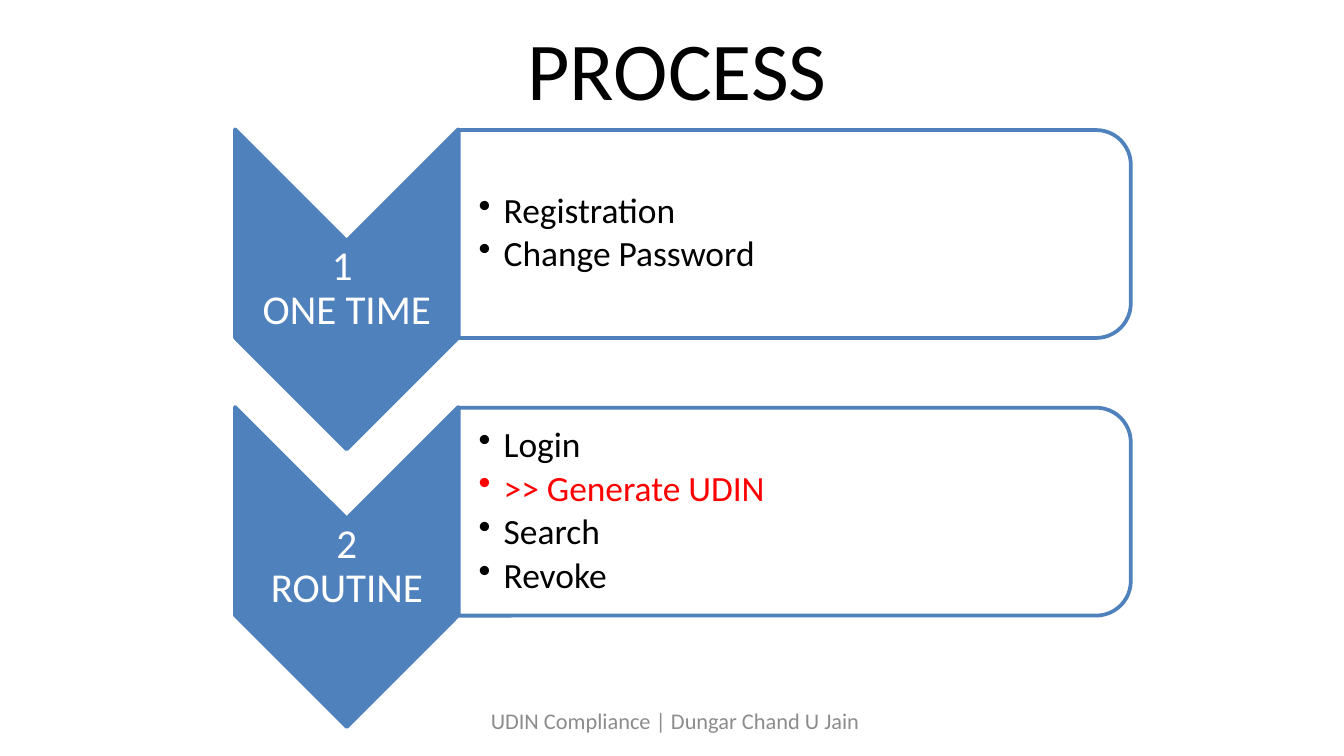
from dataclasses import dataclass

import lxml.etree
import pptx
import pptx.dml.color
import pptx.enum.shapes
import pptx.enum.text
import pptx.oxml.ns
import pptx.presentation
import pptx.shapes.autoshape
import pptx.slide
import pptx.util

Pt = pptx.util.Pt
Align = pptx.enum.text.PP_ALIGN
Shape = pptx.enum.shapes.MSO_SHAPE
qn = pptx.oxml.ns.qn

COLORS = {
    "blue": "4F81BD",
    "white": "FFFFFF",
    "black": "000000",
    "red": "FF0000",
    "gray": "8C8C8C",
}
FONT = "Calibri"
STEP_PITCH = 148.75


@dataclass(frozen=True)
class Box:
    left: float
    top: float
    width: float
    height: float

    def lowered(self, distance: float) -> "Box":
        return Box(self.left, self.top + distance, self.width, self.height)

    def lengths(self) -> list[pptx.util.Length]:
        return [Pt(value) for value in (self.left, self.top, self.width, self.height)]


@dataclass(frozen=True)
class Step:
    label: str
    items: tuple[str, ...]
    highlighted: str = ""


CHEVRON = Box(100, 95.2, 171.4, 119.6)
LABEL = Box(126, 129.4, 119.6, 51.2)
PANEL = Box(370.1, -54.6, 111.4, 360)
ITEMS = Box(245.6, 74.9, 355, 100.6)

STEPS = (
    Step("1 \vONE TIME", ("Registration", "Change Password")),
    Step("2\vROUTINE", ("Login", ">> Generate UDIN", "Search", "Revoke"), ">> Generate UDIN"),
)


def color(name: str) -> pptx.dml.color.RGBColor:
    return pptx.dml.color.RGBColor.from_string(COLORS[name])


def add_text(
    slide: pptx.slide.Slide,
    box: Box,
    lines: tuple[str, ...],
    size: float,
    color_name: str,
    alignment: Align = Align.CENTER,
    margins: tuple[float, float] = (7.2, 3.6),
) -> pptx.shapes.autoshape.Shape:
    shape = slide.shapes.add_textbox(*box.lengths())
    frame = shape.text_frame
    frame.text = "\n".join(lines)
    frame.word_wrap = True
    frame.vertical_anchor = pptx.enum.text.MSO_ANCHOR.MIDDLE
    frame.margin_left = Pt(margins[0])
    frame.margin_right = frame.margin_top = frame.margin_bottom = Pt(margins[1])
    for paragraph in frame.paragraphs:
        paragraph.alignment = alignment
        for run in paragraph.runs:
            run.font.name = FONT
            run.font.size = Pt(size)
            run.font.color.rgb = color(color_name)
    return shape


def add_turned_shape(
    slide: pptx.slide.Slide, kind: Shape, box: Box, fill: str
) -> pptx.shapes.autoshape.Shape:
    shape = slide.shapes.add_shape(kind, *box.lengths())
    shape.rotation = 90
    shape.shadow.inherit = False
    shape.fill.solid()
    shape.fill.fore_color.rgb = color(fill)
    shape.line.color.rgb = color("blue")
    shape.line.width = Pt(2)
    return shape


def add_bullet(paragraph: pptx.text.text._Paragraph) -> None:
    properties = paragraph._p.get_or_add_pPr()
    properties.set("marL", str(Pt(13.5)))
    properties.set("indent", str(-Pt(13.5)))
    lxml.etree.SubElement(properties, qn("a:buChar")).set("char", "•")


def add_step(slide: pptx.slide.Slide, step: Step, offset: float) -> None:
    add_turned_shape(slide, Shape.CHEVRON, CHEVRON.lowered(offset), "blue")
    label = add_text(
        slide, LABEL.lowered(offset), (step.label,), 22, "white", margins=(1.4, 1.4)
    )
    label.text_frame.paragraphs[0].line_spacing = 0.9
    label.text_frame.paragraphs[0].space_after = Pt(7.7)

    panel = add_turned_shape(
        slide, Shape.ROUND_2_SAME_RECTANGLE, PANEL.lowered(offset), "white"
    )
    fill_color = panel._element.spPr.find(qn("a:solidFill"))[0]
    lxml.etree.SubElement(fill_color, qn("a:alpha")).set("val", "90000")

    items = add_text(
        slide, ITEMS.lowered(offset), step.items, 19, "black", Align.LEFT, (10.8, 0.9)
    )
    for paragraph in items.text_frame.paragraphs:
        paragraph.line_spacing = 0.9
        paragraph.space_after = Pt(2.85)
        add_bullet(paragraph)
        if paragraph.text == step.highlighted:
            paragraph.runs[0].font.color.rgb = color("red")


def build() -> pptx.presentation.Presentation:
    """Build the two-step process slide."""
    presentation = pptx.Presentation()
    presentation.slide_width = Pt(720)
    presentation.slide_height = Pt(405)
    slide = presentation.slides.add_slide(presentation.slide_layouts[6])
    add_text(slide, Box(42, 2, 648, 68), ("PROCESS ",), 44, "black")
    add_text(
        slide,
        Box(246, 375, 228, 21.6),
        ("UDIN Compliance | Dungar Chand U Jain",),
        12,
        "gray",
    )
    for index, step in enumerate(STEPS):
        add_step(slide, step, index * STEP_PITCH)
    return presentation


if __name__ == "__main__":
    build().save("out.pptx")
